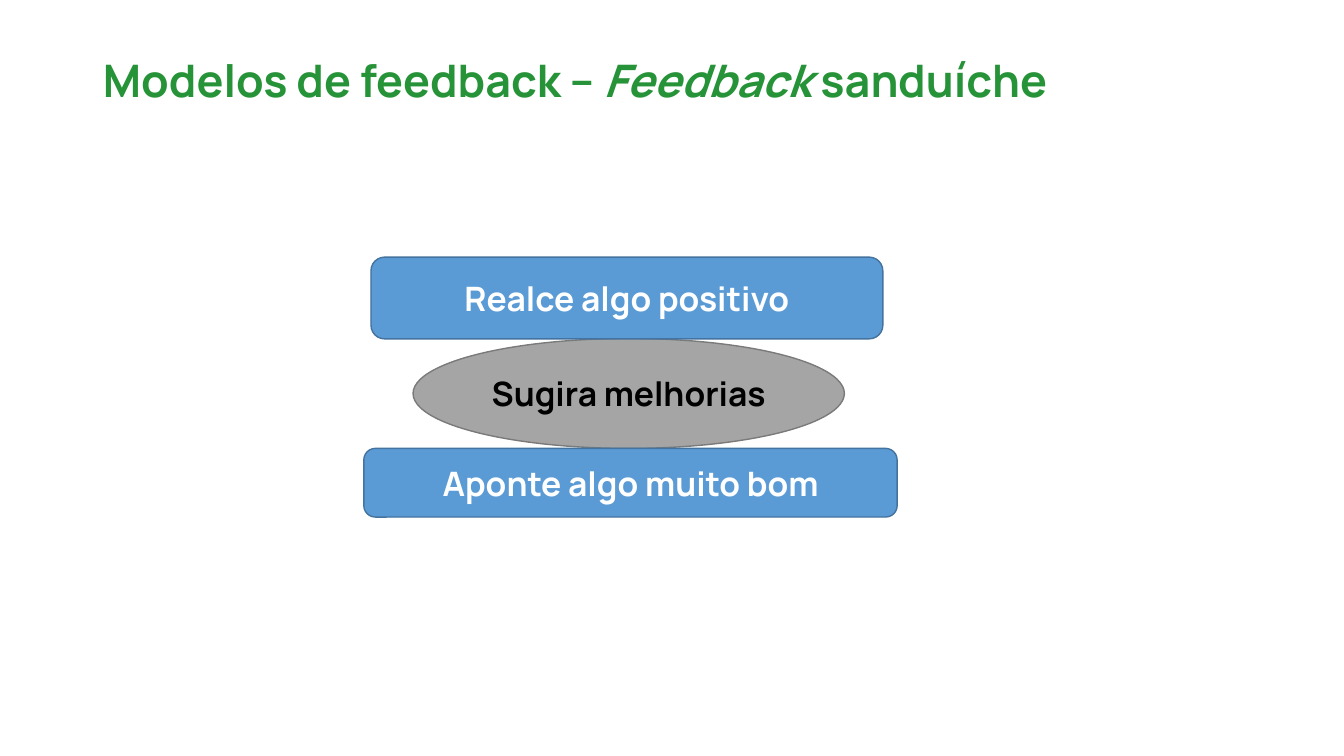
from dataclasses import dataclass

import pptx
import pptx.dml.color
import pptx.enum.shapes
import pptx.enum.text
import pptx.slide
import pptx.text.text
import pptx.util
from pptx.util import Cm

COLOURS = {
    "title": "269338",
    "bread": "5B9BD5",
    "bread_line": "43739E",
    "filling": "A5A5A5",
    "filling_line": "7A7A7A",
    "white": "FFFFFF",
    "black": "000000",
}
FONT_NAME = "Manrope"
ROUNDED = pptx.enum.shapes.MSO_SHAPE.ROUNDED_RECTANGLE
OVAL = pptx.enum.shapes.MSO_SHAPE.OVAL


@dataclass
class Layer:
    """One layer of the sandwich, with lengths in centimetres."""
    text: str
    shape_type: pptx.enum.shapes.MSO_SHAPE
    left: float
    top: float
    width: float
    height: float
    fill: str
    line: str
    text_colour: str


LAYERS = [
    Layer("Sugira melhorias", OVAL, 10.41, 8.53, 10.87, 2.77,
          "filling", "filling_line", "black"),
    Layer("Realce algo positivo", ROUNDED, 9.35, 6.48, 12.9, 2.06,
          "bread", "bread_line", "white"),
    Layer("Aponte algo muito bom", ROUNDED, 9.17, 11.3, 13.44, 1.73,
          "bread", "bread_line", "white"),
]


def colour(name: str) -> pptx.dml.color.RGBColor:
    return pptx.dml.color.RGBColor.from_string(COLOURS[name])


def format_font(font: pptx.text.text.Font, size: int, colour_name: str) -> None:
    font.name = FONT_NAME
    font.size = pptx.util.Pt(size)
    font.bold = True
    font.color.rgb = colour(colour_name)


def add_title(page: pptx.slide.Slide) -> None:
    title = page.shapes.title
    title.left, title.top = Cm(2.34), Cm(1.02)
    title.width, title.height = Cm(29.21), Cm(2.16)
    frame = title.text_frame
    frame.word_wrap = True
    frame.auto_size = pptx.enum.text.MSO_AUTO_SIZE.NONE
    frame.vertical_anchor = pptx.enum.text.MSO_ANCHOR.MIDDLE
    para = frame.paragraphs[0]
    para.alignment = pptx.enum.text.PP_ALIGN.LEFT
    para.line_spacing = 0.9
    for text, italic in (("Modelos de feedback – ", False),
                         ("Feedback", True),
                         (" sanduíche", False)):
        span = para.add_run()
        span.text = text
        format_font(span.font, 32, "title")
        span.font.italic = italic


def add_layer(page: pptx.slide.Slide, layer: Layer) -> None:
    box = page.shapes.add_shape(layer.shape_type, Cm(layer.left), Cm(layer.top),
                                Cm(layer.width), Cm(layer.height))
    box.shadow.inherit = False
    box.fill.solid()
    box.fill.fore_color.rgb = colour(layer.fill)
    box.line.color.rgb = colour(layer.line)
    box.line.width = pptx.util.Pt(1)
    frame = box.text_frame
    frame.word_wrap = True
    frame.vertical_anchor = pptx.enum.text.MSO_ANCHOR.MIDDLE
    frame.text = layer.text
    para = frame.paragraphs[0]
    para.alignment = pptx.enum.text.PP_ALIGN.CENTER
    format_font(para.runs[0].font, 24, layer.text_colour)


def main() -> None:
    deck = pptx.Presentation()
    deck.slide_width, deck.slide_height = Cm(33.87), Cm(19.05)
    page = deck.slides.add_slide(deck.slide_layouts.get_by_name("Title Only"))
    add_title(page)
    for layer in LAYERS:
        add_layer(page, layer)
    deck.save("out.pptx")


if __name__ == "__main__":
    main()
